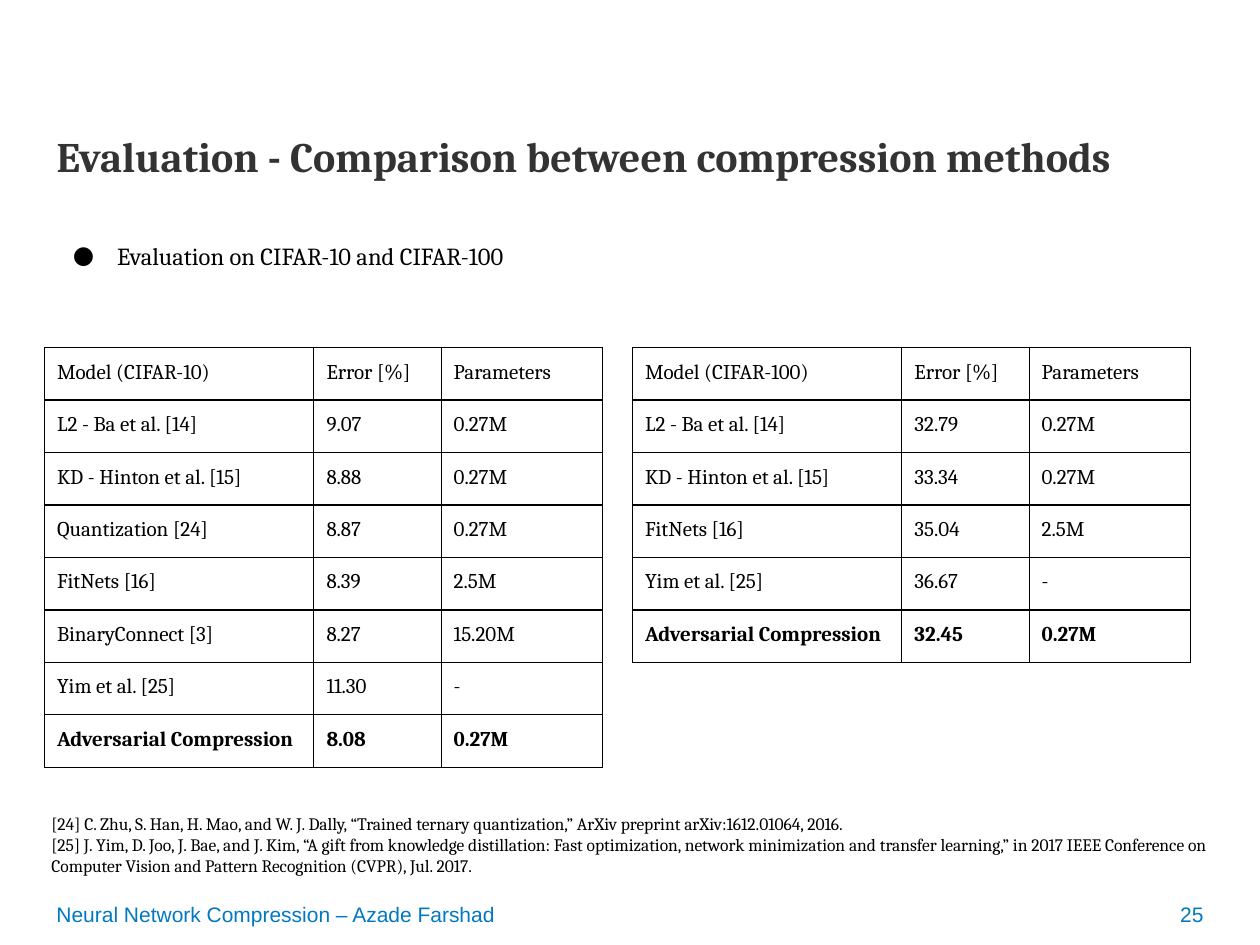
import pptx
import pptx.dml.color
import pptx.enum.text
import pptx.oxml
import pptx.oxml.ns
import pptx.util

Pt = pptx.util.Pt
ANCHOR = pptx.enum.text.MSO_ANCHOR
ALIGN = pptx.enum.text.PP_ALIGN
COLORS = {"text": "000000", "title": "333333", "footer": "0079C1"}
SERIF, SANS = "Cambria", "Arial"
COLUMN_WIDTHS = (154, 72.7, 92.3)
ROW_HEIGHT = 30
TABLE_TOP = 198.6
HEADERS = ("Error [%]", "Parameters")

CIFAR_10 = [
    ("Model (CIFAR-10)", *HEADERS),
    ("L2 - Ba et al. [14]", "9.07", "0.27M"),
    ("KD - Hinton et al. [15]", "8.88", "0.27M"),
    ("Quantization [24]", "8.87", "0.27M"),
    ("FitNets [16]", "8.39", "2.5M"),
    ("BinaryConnect [3]", "8.27", "15.20M"),
    ("Yim et al. [25]", "11.30", "-"),
    ("Adversarial Compression", "8.08", "0.27M"),
]
CIFAR_100 = [
    ("Model (CIFAR-100)", *HEADERS),
    ("L2 - Ba et al. [14]", "32.79", "0.27M"),
    ("KD - Hinton et al. [15]", "33.34", "0.27M"),
    ("FitNets [16]", "35.04", "2.5M"),
    ("Yim et al. [25]", "36.67", "-"),
    ("Adversarial Compression", "32.45", "0.27M"),
]
REFERENCES = [
    "[24] C. Zhu, S. Han, H. Mao, and W. J. Dally, “Trained ternary quantization,” "
    "ArXiv preprint arXiv:1612.01064, 2016.",
    "[25] J. Yim, D. Joo, J. Bae, and J. Kim, “A gift from knowledge distillation: "
    "Fast optimization, network minimization and transfer learning,” in 2017 IEEE "
    "Conference on Computer Vision and Pattern Recognition (CVPR), Jul. 2017.",
]


def add_span(para, text, size, font=SERIF, color="text", bold=False):
    span = para.add_run()
    span.text = text
    span.font.size = Pt(size)
    span.font.name = font
    span.font.bold = bold
    span.font.color.rgb = pptx.dml.color.RGBColor.from_string(COLORS[color])


def add_text(page, bounds, lines, size, inset=7.2, anchor=ANCHOR.TOP,
             align=ALIGN.LEFT, **style):
    frame = page.shapes.add_textbox(*map(Pt, bounds)).text_frame
    frame.word_wrap = True
    frame.vertical_anchor = anchor
    frame.margin_top = frame.margin_bottom = Pt(inset)
    for index, line in enumerate(lines):
        para = frame.add_paragraph() if index else frame.paragraphs[0]
        para.alignment = align
        add_span(para, line, size, **style)
    return frame


def add_bullet(para):
    properties = para._p.get_or_add_pPr()
    properties.set("marL", str(Pt(36)))
    properties.set("indent", str(Pt(-25.2)))
    namespace = pptx.oxml.ns.nsdecls("a")
    for element in (
        f'<a:buClr {namespace}><a:srgbClr val="{COLORS["text"]}"/></a:buClr>',
        f'<a:buFont {namespace} typeface="{SERIF}"/>',
        f'<a:buChar {namespace} char="●"/>',
    ):
        properties.append(pptx.oxml.parse_xml(element))


def add_borders(cell):
    properties = cell._tc.get_or_add_tcPr()
    namespace = pptx.oxml.ns.nsdecls("a")
    for index, side in enumerate(("lnL", "lnR", "lnT", "lnB")):
        properties.insert(index, pptx.oxml.parse_xml(
            f'<a:{side} {namespace} w="{Pt(0.75)}"><a:solidFill>'
            f'<a:srgbClr val="{COLORS["text"]}"/></a:solidFill></a:{side}>'))


def add_results(page, left, rows):
    table = page.shapes.add_table(
        len(rows), len(COLUMN_WIDTHS), Pt(left), Pt(TABLE_TOP),
        Pt(sum(COLUMN_WIDTHS)), Pt(ROW_HEIGHT * len(rows))).table
    table.first_row = table.horz_banding = False
    for column, width in zip(table.columns, COLUMN_WIDTHS):
        column.width = Pt(width)
    for row_index, values in enumerate(rows):
        table.rows[row_index].height = Pt(ROW_HEIGHT)
        for column_index, value in enumerate(values):
            cell = table.cell(row_index, column_index)
            cell.fill.background()
            cell.margin_left = cell.margin_right = Pt(7.2)
            cell.margin_top = cell.margin_bottom = Pt(7.2)
            add_borders(cell)
            add_span(cell.text_frame.paragraphs[0], value, 12,
                     bold=row_index == len(rows) - 1)


def main():
    deck = pptx.Presentation()
    deck.slide_width, deck.slide_height = Pt(720), Pt(540)
    page = deck.slides.add_slide(deck.slide_layouts[6])

    footer = dict(size=12, inset=3.6, anchor=ANCHOR.MIDDLE, font=SANS, color="footer")
    add_text(page, (25.2, 510.5, 493, 23.8),
             ["Neural Network Compression – Azade Farshad"], **footer)
    add_text(page, (649.4, 510.5, 45.4, 23.8), ["25"], align=ALIGN.RIGHT, **footer)
    add_text(page, (25.2, 71.3, 669, 68.4),
             ["Evaluation - Comparison between compression methods"],
             24, inset=3.6, color="title", bold=True)
    add_results(page, 25.4, CIFAR_10)
    add_results(page, 361.4, CIFAR_100)
    add_text(page, (22.3, 457.2, 694, 46.8), REFERENCES, 10)
    topic = add_text(page, (23.8, 130.3, 656.6, 55.4),
                     ["Evaluation on CIFAR-10 and CIFAR-100"], 14)
    add_bullet(topic.paragraphs[0])
    deck.save("out.pptx")


if __name__ == "__main__":
    main()
